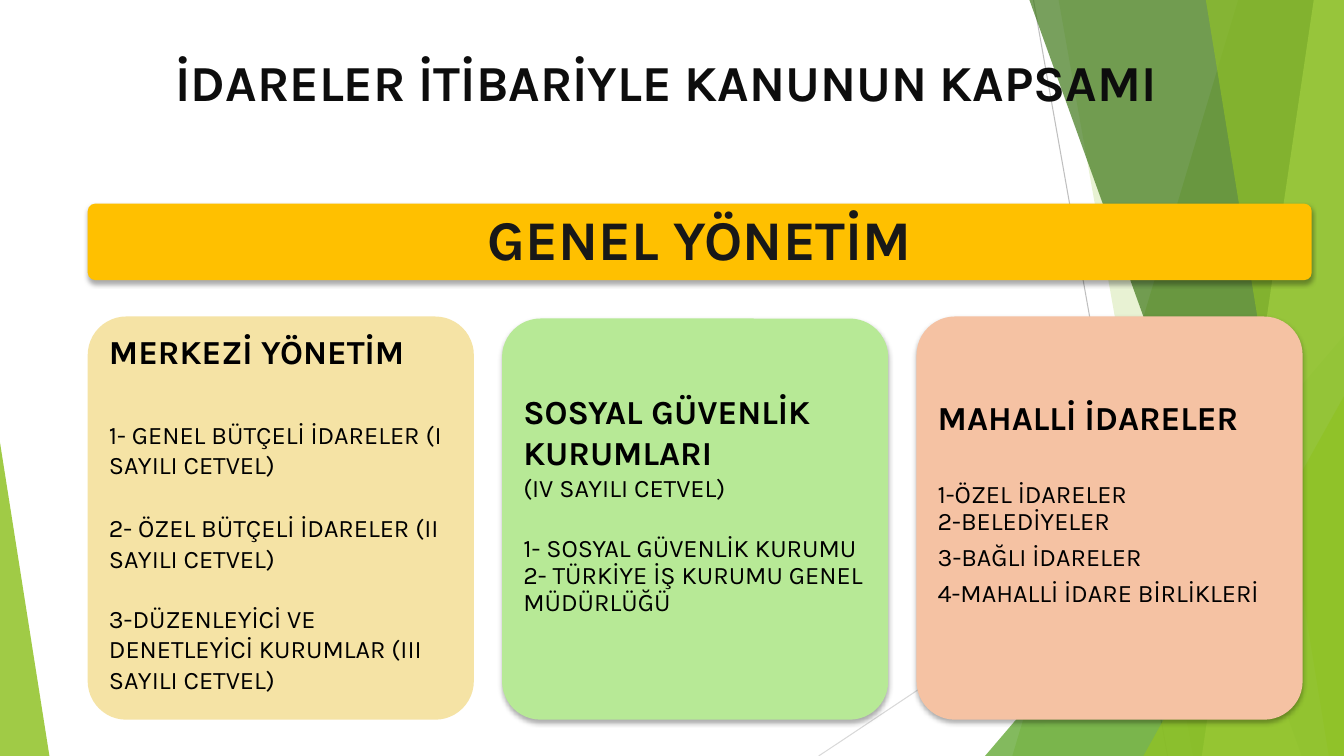
from dataclasses import dataclass

from lxml import etree
from pptx import Presentation
from pptx.dml.color import RGBColor
from pptx.enum.shapes import MSO_CONNECTOR, MSO_SHAPE
from pptx.enum.text import MSO_ANCHOR, PP_ALIGN
from pptx.oxml.ns import qn
from pptx.util import Inches, Pt

STRAIGHT = MSO_CONNECTOR.STRAIGHT
ROUNDED = MSO_SHAPE.ROUNDED_RECTANGLE
TRIANGLE = MSO_SHAPE.ISOSCELES_TRIANGLE
TOP, MIDDLE = MSO_ANCHOR.TOP, MSO_ANCHOR.MIDDLE
LEFT, CENTER = PP_ALIGN.LEFT, PP_ALIGN.CENTER

WIDTH, HEIGHT = 13.33, 7.5
GRID_LEFT, COLUMN, GUTTER = 0.87, 3.83, 0.28
CARD_BOTTOM = 7.14


@dataclass(frozen=True)
class Theme:
    """Colours and type sizes of the slide."""
    font: str = "Karla"
    title: str = "0D0D0D"
    banner_text: str = "181818"
    text: str = "000000"
    banner: str = "FFC000"
    sand: str = "F5E3A5"
    mint: str = "B7E996"
    peach: str = "F5C2A3"
    green: str = "90C226"
    leaf: str = "54A021"
    forest: str = "3F7819"
    lime: str = "C0E474"
    grey: str = "BFBFBF"
    light_grey: str = "D9D9D9"
    title_size: int = 36
    banner_size: int = 40
    heading_size: int = 24
    body_size: int = 18


THEME = Theme()

RAYS = [
    ((10.25, 0), (11.58, HEIGHT), THEME.grey),
    ((WIDTH, 4.03), (8.12, HEIGHT), THEME.light_grey),
]

# Each band reaches the right edge: top x, bottom x, colour, opacity.
BACK_BANDS = [(12.28, 10.04, THEME.green, 30), (10.5, 11.83, THEME.green, 20)]
FRONT_BANDS = [
    (10.21, 12.91, THEME.forest, 70),
    (13.03, 11.92, THEME.lime, 70),
    (11.96, 13.18, THEME.green, 65),
]

# Each card: top, text inset, colour, shadow, heading, then lines as
# text, space before in points, line spacing.
CARDS = [
    (3.14, 0.03, THEME.sand, False, "MERKEZİ YÖNETİM", [
        ("1- GENEL BÜTÇELİ İDARELER (I SAYILI CETVEL)", 34.5, 1.0),
        ("2- ÖZEL BÜTÇELİ İDARELER (II SAYILI CETVEL)", 23.5, 1.0),
        ("3-DÜZENLEYİCİ VE DENETLEYİCİ KURUMLAR (III SAYILI CETVEL)", 21.5, 1.0),
    ]),
    (3.16, 0.61, THEME.mint, True, "SOSYAL GÜVENLİK KURUMLARI", [
        ("(IV SAYILI CETVEL)", 0, 1.0),
        ("1- SOSYAL GÜVENLİK KURUMU", 21.5, 1.0),
        ("2- TÜRKİYE İŞ KURUMU GENEL MÜDÜRLÜĞÜ", 0, 0.9),
    ]),
    (3.14, 0.69, THEME.peach, True, "MAHALLİ İDARELER", [
        ("1-ÖZEL İDARELER", 29, 1.0),
        ("2-BELEDİYELER", 0, 0.9),
        ("3-BAĞLI İDARELER", 6.3, 0.9),
        ("4-MAHALLİ İDARE BİRLİKLERİ", 6.3, 0.9),
    ]),
]


def paint(shape, color, opacity=100):
    """Give a shape a plain fill, without outline or shadow."""
    shape.shadow.inherit = False
    shape.fill.solid()
    shape.fill.fore_color.rgb = RGBColor.from_string(color)
    shape.line.fill.background()
    if opacity < 100:
        tint = shape._element.spPr.find(".//" + qn("a:srgbClr"))
        etree.SubElement(tint, qn("a:alpha"), val=str(opacity * 1000))


def cast_shadow(shape):
    """Put a soft shadow below a painted shape."""
    effects = shape._element.spPr.find(qn("a:effectLst"))
    shadow = etree.SubElement(
        effects, qn("a:outerShdw"), blurRad=str(Pt(3.5)), dist=str(Pt(2.2)),
        dir="5400000", algn="ctr", rotWithShape="0")
    tint = etree.SubElement(shadow, qn("a:srgbClr"), val="000000")
    etree.SubElement(tint, qn("a:alpha"), val="32000")


def add_ray(slide, start, end, color):
    """Draw a thin background line."""
    ray = slide.shapes.add_connector(STRAIGHT, *map(Inches, start + end))
    ray.line.color.rgb = RGBColor.from_string(color)
    ray.line.width = Pt(0.75)
    etree.SubElement(ray._element.spPr, qn("a:effectLst"))


def add_band(slide, top_x, bottom_x, color, opacity):
    """Draw a slanted band that runs to the right edge."""
    corners = [(WIDTH, 0), (WIDTH, HEIGHT), (bottom_x, HEIGHT)]
    outline = slide.shapes.build_freeform(Inches(top_x), 0)
    outline.add_line_segments([(Inches(x), Inches(y)) for x, y in corners])
    paint(outline.convert_to_shape(), color, opacity)


def add_corner(slide, left, top, width, apex, color, opacity):
    """Draw a right triangle that stands on the bottom edge."""
    corner = slide.shapes.add_shape(
        TRIANGLE, *map(Inches, (left, top, width, HEIGHT - top)))
    corner.adjustments[0] = apex
    paint(corner, color, opacity)


def add_backdrop(slide):
    """Draw the green facets behind the content."""
    for ray in RAYS:
        add_ray(slide, *ray)
    for band in BACK_BANDS:
        add_band(slide, *band)
    add_corner(slide, 9.77, 3.33, 3.56, 1, THEME.leaf, 72)
    for band in FRONT_BANDS:
        add_band(slide, *band)
    add_corner(slide, 11.34, 3.93, 1.99, 1, THEME.green, 80)
    add_corner(slide, 0, 4.39, 0.49, 0, THEME.green, 85)


def write(paragraph, text, size, color, bold=False, align=LEFT, before=0, spacing=1.0):
    """Fill and format one paragraph."""
    paragraph.text = text
    paragraph.alignment = align
    paragraph.space_before = Pt(before)
    paragraph.line_spacing = spacing
    paragraph.font.name = THEME.font
    paragraph.font.size = Pt(size)
    paragraph.font.bold = bold
    paragraph.font.color.rgb = RGBColor.from_string(color)


def add_title(slide, text):
    """Place the title above the backdrop."""
    title = slide.shapes.title
    title.left, title.top, title.width, title.height = map(
        Inches, (0.86, 0.46, 11.5, 1.06))
    title.text_frame.vertical_anchor = TOP
    write(title.text_frame.paragraphs[0], text, THEME.title_size, THEME.title,
          bold=True, align=CENTER)
    title.element.getparent().append(title.element)


def add_panel(slide, left, top, width, height, color, anchor, inset, shadow):
    """Draw a rounded panel and return its text frame."""
    panel = slide.shapes.add_shape(ROUNDED, *map(Inches, (left, top, width, height)))
    panel.adjustments[0] = 0.1
    paint(panel, color)
    if shadow:
        cast_shadow(panel)
    frame = panel.text_frame
    frame.word_wrap = True
    frame.vertical_anchor = anchor
    frame.margin_left = frame.margin_right = Inches(0.1)
    frame.margin_top, frame.margin_bottom = Inches(inset), 0
    return frame


def add_card(slide, column, top, inset, color, shadow, heading, lines):
    """Add one administration card in its grid column."""
    left = GRID_LEFT + column * (COLUMN + GUTTER)
    frame = add_panel(slide, left, top, COLUMN, CARD_BOTTOM - top, color, TOP,
                      inset, shadow)
    write(frame.paragraphs[0], heading, THEME.heading_size, THEME.text, bold=True)
    for text, before, spacing in lines:
        write(frame.add_paragraph(), text, THEME.body_size, THEME.text,
              before=before, spacing=spacing)


def main():
    """Build and save the slide."""
    deck = Presentation()
    deck.slide_width, deck.slide_height = Inches(WIDTH), Inches(HEIGHT)
    slide = deck.slides.add_slide(deck.slide_layouts[5])
    add_backdrop(slide)
    add_title(slide, "İDARELER İTİBARİYLE KANUNUN KAPSAMI")
    banner = add_panel(slide, GRID_LEFT, 2.02, 12.14, 0.76, THEME.banner, MIDDLE, 0, True)
    write(banner.paragraphs[0], "GENEL YÖNETİM", THEME.banner_size,
          THEME.banner_text, bold=True, align=CENTER, spacing=0.9)
    for column, card in enumerate(CARDS):
        add_card(slide, column, *card)
    deck.save("out.pptx")


if __name__ == "__main__":
    main()
